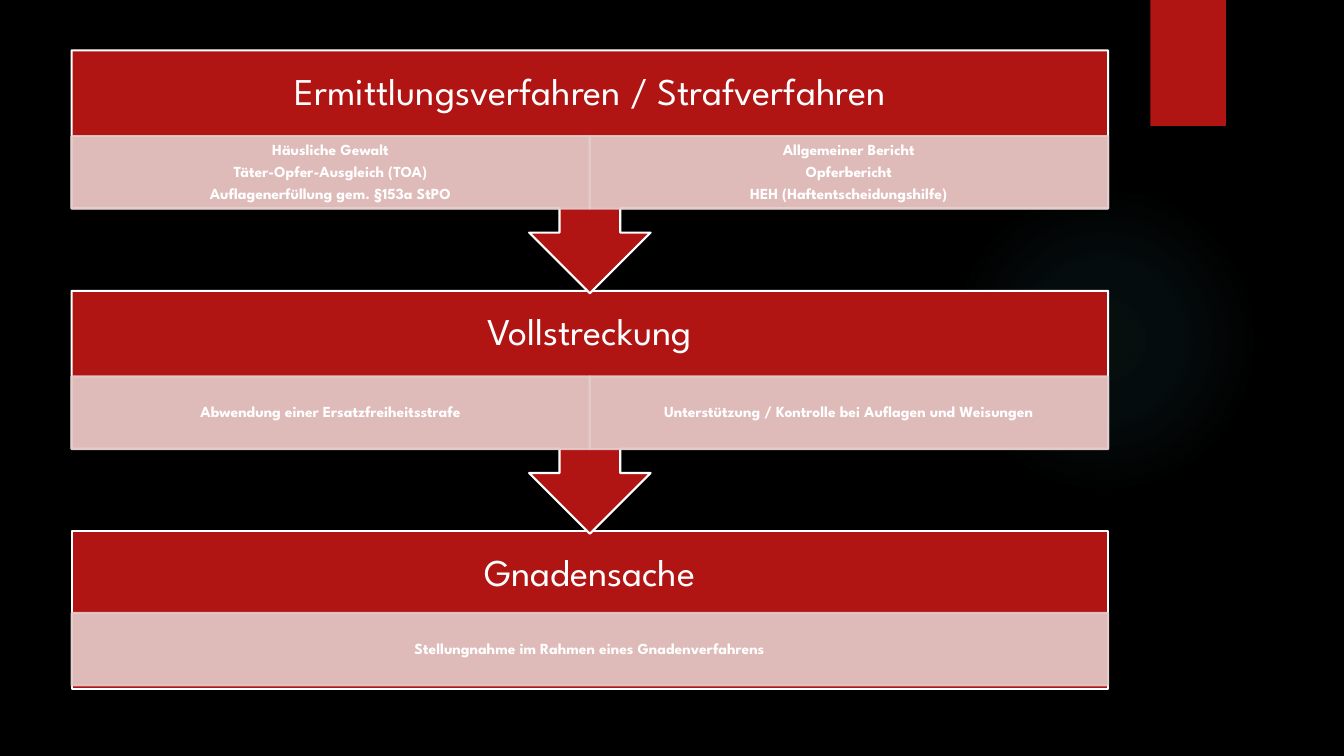
"""Build the slide showing the three stages of a criminal procedure."""
from lxml import etree
from pptx import Presentation
from pptx.dml.color import RGBColor
from pptx.enum import shapes, text
from pptx.oxml import ns
from pptx.util import Inches, Pt

COLOURS = {"black": "000000", "red": "B01513", "pink": "E4CCCC", "white": "FFFFFF", "glow": "50B9C1"}
FONT = "League Spartan"
LEFT, WIDTH = 0.71, 10.28
TOP, STEP = 0.5, 2.385
TITLE_HEIGHT, PANEL_HEIGHT = 0.85, 0.72
CALLOUT_HEIGHT, LAST_HEIGHT = 2.41, 1.57

STAGES = [
    ("Ermittlungsverfahren / Strafverfahren", [
        ["Häusliche Gewalt", "Täter-Opfer-Ausgleich (TOA)", "Auflagenerfüllung gem. §153a StPO"],
        ["Allgemeiner Bericht", "Opferbericht", "HEH (Haftentscheidungshilfe)"],
    ]),
    ("Vollstreckung", [
        ["Abwendung einer Ersatzfreiheitsstrafe"],
        ["Unterstützung / Kontrolle bei Auflagen und Weisungen"],
    ]),
    ("Gnadensache", [["Stellungnahme im Rahmen eines Gnadenverfahrens"]]),
]


def rgb(name):
    """Return a named colour."""
    return RGBColor.from_string(COLOURS[name])


def add_element(parent, tag, **attributes):
    """Append a DrawingML element."""
    return etree.SubElement(parent, ns.qn(tag), attributes)


def set_alpha(fill, percent):
    """Make a solid fill partly transparent."""
    colour = fill._xPr.find(ns.qn("a:solidFill"))[0]
    add_element(colour, "a:alpha", val=str(percent * 1000))


def add_block(parent, kind, place, colour, line=None):
    """Add a filled shape, with an outline if a line colour is given."""
    block = parent.add_shape(kind, *map(Inches, place))
    block.shadow.inherit = False
    block.fill.solid()
    block.fill.fore_color.rgb = rgb(colour)
    if line:
        block.line.color.rgb = rgb(line)
        block.line.width = Pt(1.5)
    else:
        block.line.fill.background()
    return block


def write_lines(box, lines, size, bold, insets):
    """Write centred white paragraphs into a box."""
    frame = box.text_frame
    frame.word_wrap = True
    frame.vertical_anchor = text.MSO_ANCHOR.MIDDLE
    frame.margin_left = frame.margin_right = Inches(insets[0])
    frame.margin_top = frame.margin_bottom = Inches(insets[1])
    for index, line in enumerate(lines):
        para = frame.add_paragraph() if index else frame.paragraphs[0]
        para.alignment = text.PP_ALIGN.CENTER
        para.line_spacing = 0.9
        para.space_after = Pt(0)
        after = para._p.pPr.find(ns.qn("a:spcAft"))
        after.remove(after[0])
        add_element(after, "a:spcPct", val="35000")
        span = para.add_run()
        span.text = line
        span.font.name = FONT
        span.font.size = Pt(size)
        span.font.bold = bold
        span.font.color.rgb = rgb("white")


def add_glow(page):
    """Add the faint round glow on the right."""
    glow = add_block(page.shapes, shapes.MSO_SHAPE.OVAL, (9.41, 1.83, 3.08, 3.08), "glow")
    properties = glow._element.spPr
    solid = properties.find(ns.qn("a:solidFill"))
    gradient = etree.Element(ns.qn("a:gradFill"), rotWithShape="1")
    stops = add_element(gradient, "a:gsLst")
    for position, alpha in ((0, 7), (36, 6), (69, 0)):
        stop = add_element(stops, "a:gs", pos=str(position * 1000))
        colour = add_element(stop, "a:srgbClr", val=COLOURS["glow"])
        add_element(colour, "a:alpha", val=str(alpha * 1000))
    circle = add_element(gradient, "a:path", path="circle")
    add_element(circle, "a:fillToRect", l="50000", t="50000", r="50000", b="50000")
    properties.replace(solid, gradient)


def add_panel(parent, place, lines):
    """Add a translucent panel with its lines of text."""
    panel = add_block(parent, shapes.MSO_SHAPE.RECTANGLE, place, "pink", "pink")
    set_alpha(panel.fill, 90)
    set_alpha(panel.line.fill, 90)
    write_lines(panel, lines, 11, True, (0.09, 0.02))


def add_stage(parent, top, title, panels, last):
    """Add a stage: its body, its title and a row of panels."""
    if last:
        add_block(parent, shapes.MSO_SHAPE.RECTANGLE, (LEFT, top, WIDTH, LAST_HEIGHT), "red", "white")
    else:
        place = (LEFT, top, WIDTH, CALLOUT_HEIGHT)
        callout = add_block(parent, shapes.MSO_SHAPE.UP_ARROW_CALLOUT, place, "red", "white")
        callout.rotation = 180
    heading = parent.add_textbox(*map(Inches, (LEFT, top, WIDTH, TITLE_HEIGHT)))
    write_lines(heading, [title], 27, False, (0.21, 0.21))
    panel_top = top + (0.81 if last else TITLE_HEIGHT)
    width = WIDTH / len(panels)
    for column, lines in enumerate(panels):
        add_panel(parent, (LEFT + column * width, panel_top, width, PANEL_HEIGHT), lines)


def main():
    """Build and save the deck."""
    deck = Presentation()
    deck.slide_width, deck.slide_height = Inches(13.33), Inches(7.5)
    page = deck.slides.add_slide(deck.slide_layouts[6])
    page.background.fill.solid()
    page.background.fill.fore_color.rgb = rgb("black")
    add_glow(page)
    add_block(page.shapes, shapes.MSO_SHAPE.RECTANGLE, (11.41, 0, 0.75, 1.25), "red")
    diagram = page.shapes.add_group_shape().shapes
    final = len(STAGES) - 1
    for index in reversed(range(len(STAGES))):
        title, panels = STAGES[index]
        add_stage(diagram, TOP + index * STEP, title, panels, index == final)
    deck.save("out.pptx")


if __name__ == "__main__":
    main()
